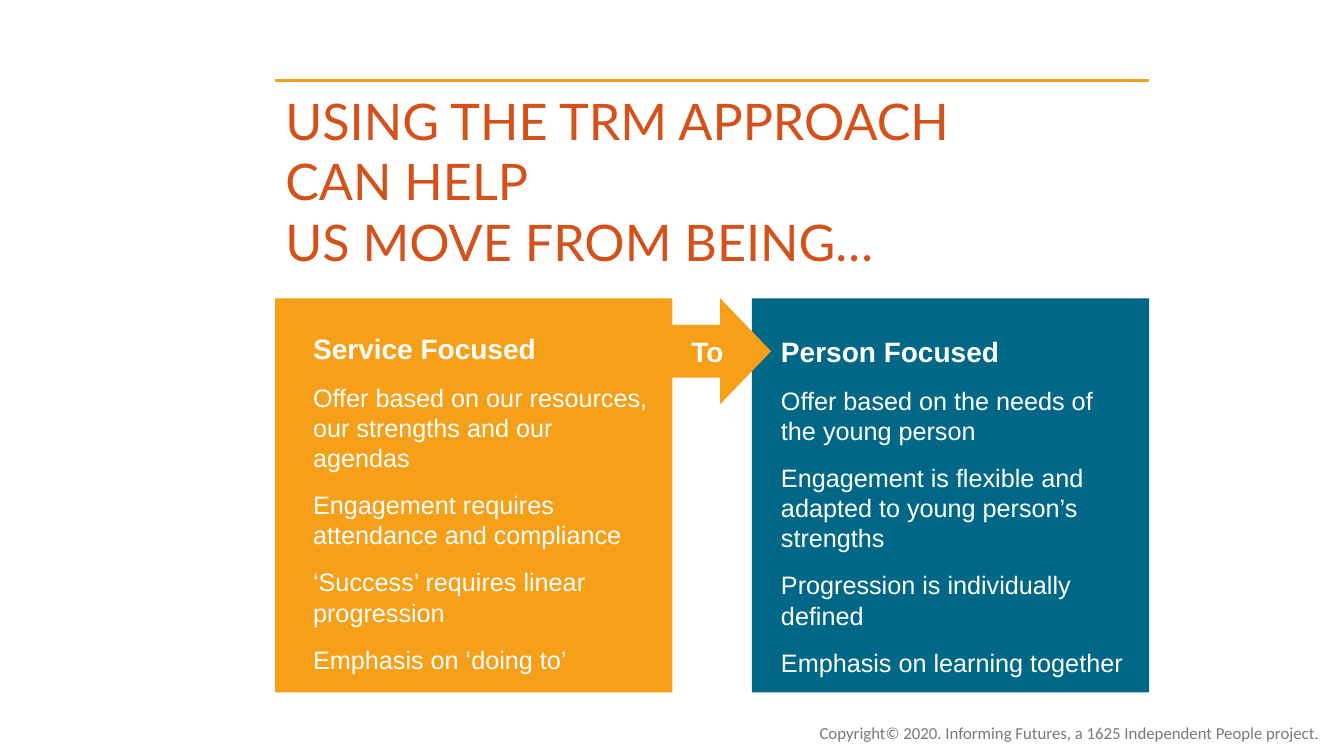
from pptx import Presentation
from pptx.dml.color import RGBColor
from pptx.enum.shapes import MSO_CONNECTOR, MSO_SHAPE
from pptx.enum.text import MSO_ANCHOR as ANCHOR, MSO_AUTO_SIZE as AUTO, PP_ALIGN as ALIGN
from pptx.oxml.ns import qn
from pptx.util import Pt
from lxml import etree

COLORS = {"orange": "F69F19", "teal": "006886", "rust": "D5511A",
          "grey": "7D7875", "white": "FFFFFF"}

TITLE = ["USING THE TRM APPROACH CAN HELP", "US MOVE FROM BEING…"]
SERVICE = ["Service Focused",
           "Offer based on our resources, our strengths and our agendas",
           "Engagement requires attendance and compliance",
           "‘Success’ requires linear progression",
           "Emphasis on ‘doing to’"]
PERSON = ["Person Focused",
          "Offer based on the needs of the young person",
          "Engagement is flexible and adapted to young person’s strengths",
          "Progression is individually defined",
          "Emphasis on learning together"]
COPYRIGHT = "Copyright© 2020.\u00a0Informing Futures, a 1625 Independent People project."

LEFT, WIDTH = 196.6, 624.2
PANEL_TOP, PANEL_W, PANEL_H = 213.1, 283.7, 281.5


def rgb(name):
    return RGBColor.from_string(COLORS[name])


def write(tf, lines, size=18, font="Arial", color="white", align=ALIGN.LEFT,
          anchor=ANCHOR.TOP, after=0, head_size=None, bold_head=False):
    tf.word_wrap = True
    tf.auto_size = AUTO.NONE
    tf.vertical_anchor = anchor
    for i, line in enumerate(lines):
        p = tf.paragraphs[0] if i == 0 else tf.add_paragraph()
        p.alignment = align
        p.space_after = Pt(after)
        r = p.add_run()
        r.text = line
        r.font.name = font
        r.font.size = Pt(head_size if head_size and i == 0 else size)
        r.font.bold = bold_head and i == 0
        r.font.color.rgb = rgb(color)


def add_block(slide, kind, box, color):
    sp = slide.shapes.add_shape(kind, *map(Pt, box))
    sp.shadow.inherit = False
    sp.fill.solid()
    sp.fill.fore_color.rgb = rgb(color)
    sp.line.fill.background()
    return sp


def add_heading(slide, x, y, w):
    # Rule above the title
    rule = slide.shapes.add_connector(MSO_CONNECTOR.STRAIGHT, Pt(x), Pt(y), Pt(x + w), Pt(y))
    rule.line.color.rgb = rgb("orange")
    rule.line.width = Pt(2.25)
    etree.SubElement(rule._element.spPr, qn("a:effectLst"))
    # Title
    title = slide.shapes.title
    title.left, title.top, title.width, title.height = map(Pt, (x, y + 2.9, 540, 136))
    write(title.text_frame, TITLE, size=36, font="Lato", color="rust")


def add_panel(slide, box, color, lines, dx, dy, text_w):
    x, y, w, h = box
    add_block(slide, MSO_SHAPE.RECTANGLE, box, color)
    tb = slide.shapes.add_textbox(Pt(x + dx), Pt(y + dy), Pt(text_w), Pt(254))
    write(tb.text_frame, lines, after=12, head_size=20, bold_head=True)


def add_arrow(slide, box):
    sp = add_block(slide, MSO_SHAPE.RIGHT_ARROW, box, "orange")
    write(sp.text_frame, ["To"], size=20, align=ALIGN.CENTER,
          anchor=ANCHOR.MIDDLE, bold_head=True)


def add_copyright(slide, box):
    tb = slide.shapes.add_textbox(*map(Pt, box))
    write(tb.text_frame, [COPYRIGHT], size=12, font="Calibri", color="grey", align=ALIGN.RIGHT)


def main():
    prs = Presentation()
    prs.slide_width, prs.slide_height = Pt(960), Pt(540)
    slide = prs.slides.add_slide(prs.slide_layouts[5])

    add_copyright(slide, (499.7, 512.6, 450, 21.6))
    add_heading(slide, LEFT, 57.6, WIDTH)
    # Two panels joined by the arrow
    right = LEFT + WIDTH - PANEL_W
    add_panel(slide, (LEFT, PANEL_TOP, PANEL_W, PANEL_H), "orange", SERVICE, 20, 20.2, 257)
    add_panel(slide, (right, PANEL_TOP, PANEL_W, PANEL_H), "teal", PERSON, 13.7, 22.3, 259.2)
    add_arrow(slide, (LEFT + PANEL_W - 2.2, PANEL_TOP, 72.7, 75.6))

    prs.save("out.pptx")


if __name__ == "__main__":
    main()
